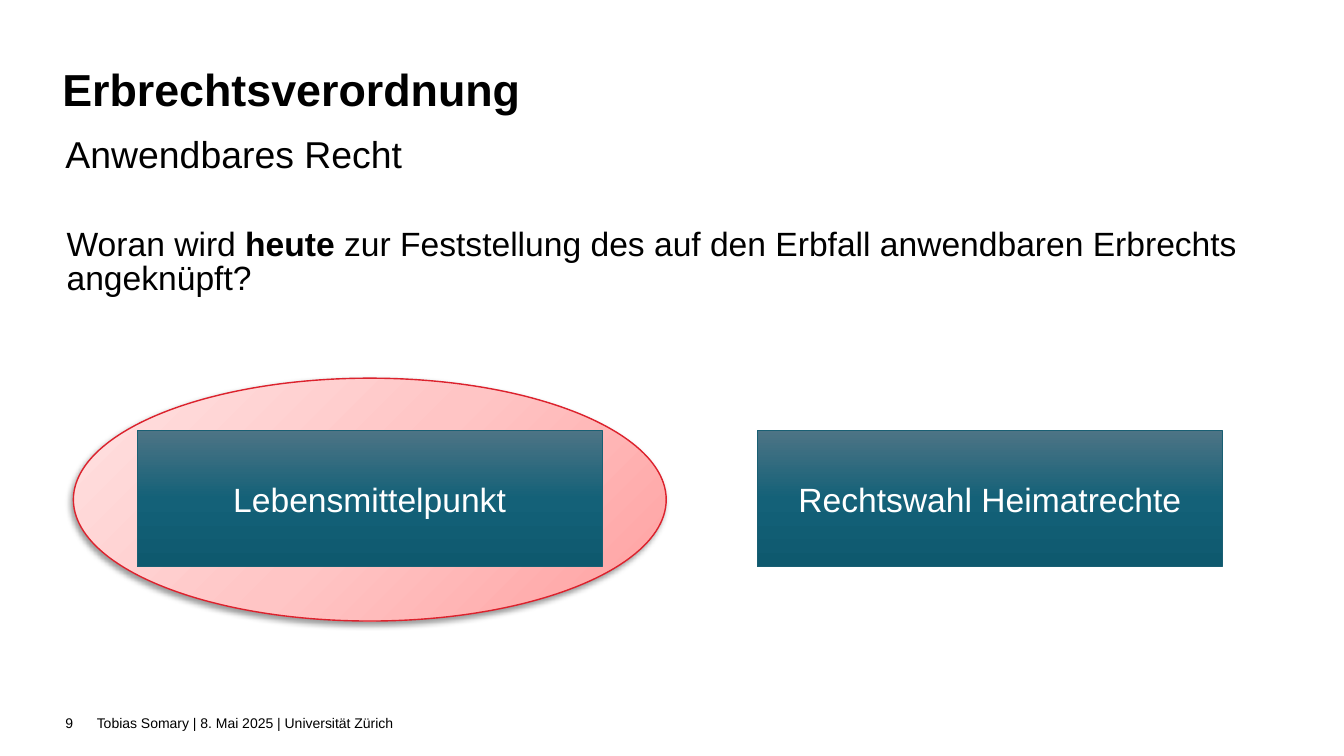
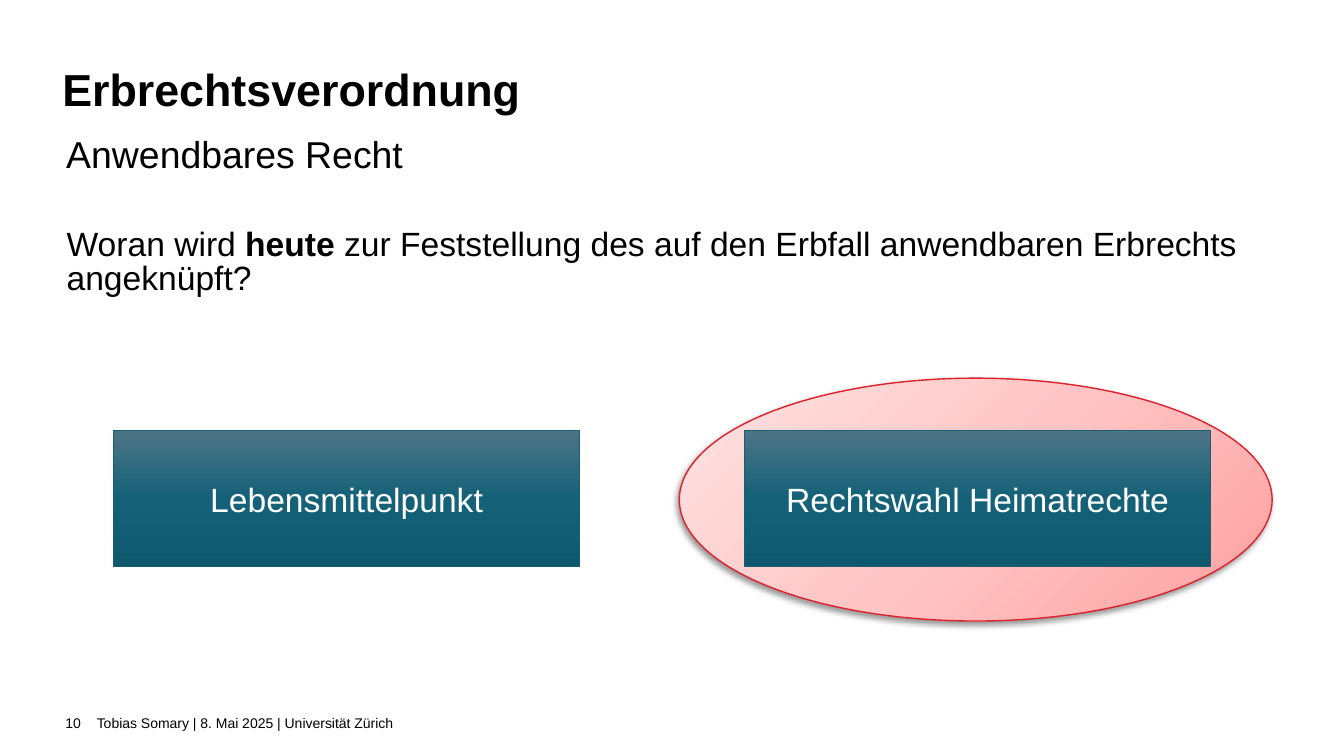
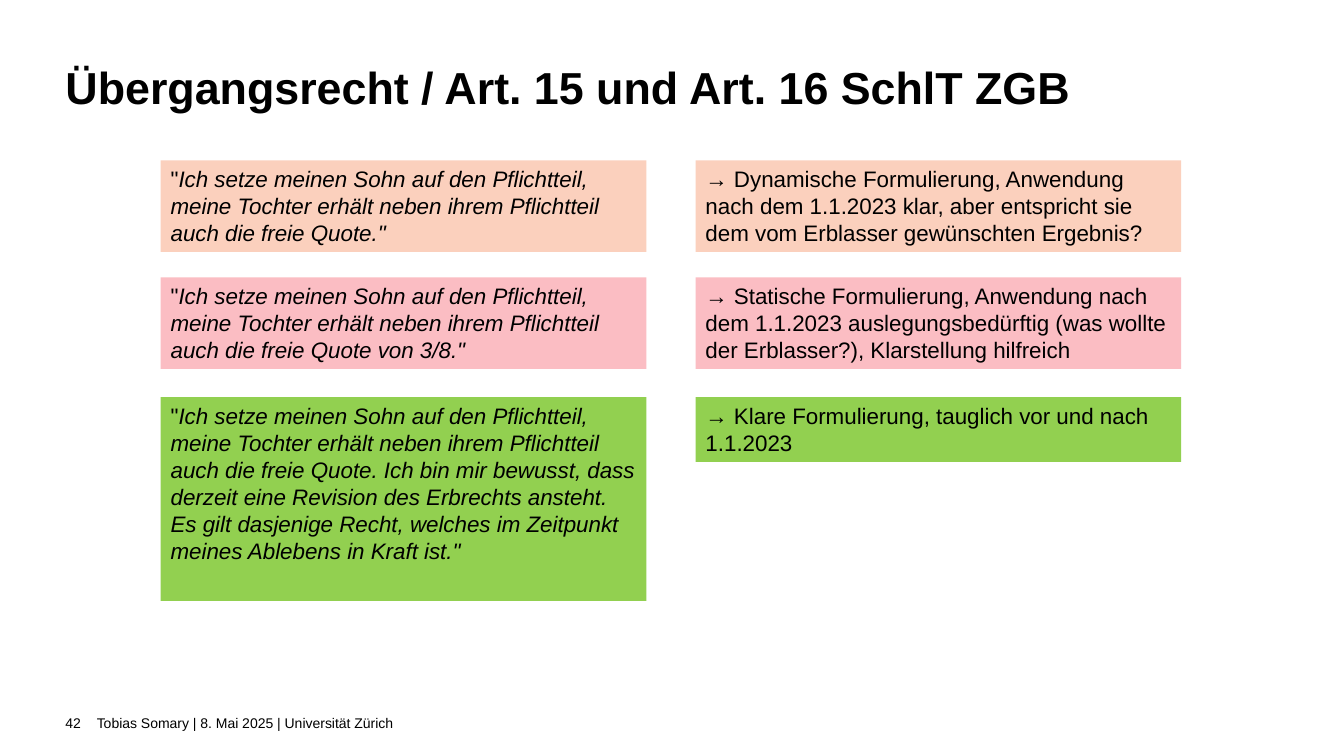
from dataclasses import dataclass

from lxml import etree
from pptx import Presentation
from pptx.dml.color import RGBColor
from pptx.enum.shapes import MSO_SHAPE
from pptx.enum.text import MSO_ANCHOR, PP_ALIGN
from pptx.oxml.ns import qn
from pptx.util import Cm, Pt

RECTANGLE, OVAL = MSO_SHAPE.RECTANGLE, MSO_SHAPE.FLOWCHART_CONNECTOR
TOP, MIDDLE, BOTTOM = MSO_ANCHOR.TOP, MSO_ANCHOR.MIDDLE, MSO_ANCHOR.BOTTOM
LEFT, CENTER = PP_ALIGN.LEFT, PP_ALIGN.CENTER


@dataclass(frozen=True)
class Theme:
    font: str = "Arial"
    # Colours
    ink: str = "000000"
    light: str = "FFFFFF"
    option_stops: tuple = ((0, "4D7485"), (50, "146178"), (100, "0E596E"))
    option_line: str = "195F73"
    marker_stops: tuple = ((0, "FFA0A0"), (50, "FFC5C5"), (100, "FFE3E3"))
    marker_line: str = "DC222D"
    peach: str = "FBD0BD"
    pink: str = "FBBDC3"
    green: str = "92D050"
    # Type sizes in points
    title: float = 32
    subtitle: float = 26.7
    body: float = 24
    clause: float = 16
    footer: float = 10
    # Horizontal and vertical insets in centimetres
    flush: tuple = (0, 0)
    padded: tuple = (0.33, 0.18)
    clause_inset: tuple = (0.25, 0.13)


class Deck:
    """Holds the style and the slide being filled; boxes are in centimetres."""

    def __init__(self, theme):
        self.theme = theme
        self.presentation = Presentation()
        self.presentation.slide_width = Cm(33.87)
        self.presentation.slide_height = Cm(19.05)
        self.slide = None

    # Slide and footer
    def new_slide(self, number):
        blank = self.presentation.slide_layouts[6]
        self.slide = self.presentation.slides.add_slide(blank)
        size = self.theme.footer
        self.text((1.65, 17.4, 0.79, 1.65), str(number), size, anchor=MIDDLE)
        self.text((2.44, 17.4, 11.94, 1.65),
                  "Tobias Somary | 8. Mai 2025 | Universität Zürich",
                  size, anchor=MIDDLE)

    # Text
    def fill_frame(self, frame, content, size, color=None, inset=None,
                   anchor=TOP, align=LEFT, bold=False):
        """Content is a string or a list of (text, bold, italic) runs."""
        side, edge = inset or self.theme.flush
        frame.word_wrap = True
        frame.vertical_anchor = anchor
        frame.margin_left = frame.margin_right = Cm(side)
        frame.margin_top = frame.margin_bottom = Cm(edge)
        paragraph = frame.paragraphs[0]
        paragraph.alignment = align
        pieces = [(content, bold, False)] if isinstance(content, str) else content
        for words, is_bold, is_italic in pieces:
            run = paragraph.add_run()
            run.text = words
            run.font.name = self.theme.font
            run.font.size = Pt(size)
            run.font.bold = is_bold
            run.font.italic = is_italic
            run.font.color.rgb = RGBColor.from_string(color or self.theme.ink)
        return paragraph

    def text(self, box, content, size, **style):
        frame = self.slide.shapes.add_textbox(*map(Cm, box)).text_frame
        return self.fill_frame(frame, content, size, **style)

    def title(self, box, words, **style):
        return self.text(box, words, self.theme.title, bold=True, **style)

    def subtitle(self, left, words):
        paragraph = self.text((left, 3.12, 20.52, 2.39), words,
                              self.theme.subtitle, inset=self.theme.padded)
        paragraph.space_before = Pt(8)

    def question(self, runs):
        paragraph = self.text((1.68, 5.79, 30.35, 3), runs, self.theme.body)
        paragraph.line_spacing = Pt(24)
        paragraph.space_before = Pt(10)

    # Shapes
    def shape(self, kind, box, line=None, width=1):
        shape = self.slide.shapes.add_shape(kind, *map(Cm, box))
        shape.shadow.inherit = False
        if line:
            shape.line.color.rgb = RGBColor.from_string(line)
            shape.line.width = Pt(width)
        else:
            shape.line.fill.background()
        return shape

    def gradient(self, shape, stops, angle):
        shape.fill.gradient()
        shape.fill.gradient_angle = 360 - angle
        stop_list = shape._element.spPr.find(qn("a:gradFill")).find(qn("a:gsLst"))
        for old_stop in list(stop_list):
            stop_list.remove(old_stop)
        for position, color in stops:
            stop = etree.SubElement(stop_list, qn("a:gs"), pos=str(position * 1000))
            etree.SubElement(stop, qn("a:srgbClr"), val=color)

    def marker(self, left):
        """Red oval with a soft shadow behind the chosen option."""
        oval = self.shape(OVAL, (left, 9.53, 14.94, 6.12), self.theme.marker_line)
        self.gradient(oval, self.theme.marker_stops, 225)
        effects = oval._element.spPr.find(qn("a:effectLst"))
        shadow = etree.SubElement(
            effects, qn("a:outerShdw"), blurRad=str(Pt(4)), dist=str(Pt(3)),
            dir=str(135 * 60000), algn="ctr", rotWithShape="0")
        color = etree.SubElement(shadow, qn("a:srgbClr"), val=self.theme.ink)
        etree.SubElement(color, qn("a:alpha"), val="40000")

    def option(self, left, words):
        block = self.shape(RECTANGLE, (left, 10.85, 11.73, 3.43),
                           self.theme.option_line, 0.5)
        self.gradient(block, self.theme.option_stops, 90)
        self.fill_frame(block.text_frame, words, self.theme.body, self.theme.light,
                        self.theme.padded, MIDDLE, CENTER)

    def clause(self, box, content, fill):
        block = self.shape(RECTANGLE, box)
        block.fill.solid()
        block.fill.fore_color.rgb = RGBColor.from_string(fill)
        self.fill_frame(block.text_frame, content, self.theme.clause,
                        inset=self.theme.clause_inset)


def connecting_factor_slide(deck, number, subtitle_left, marker_left, option_lefts):
    deck.new_slide(number)
    deck.title((1.24, 1.5, 32.28, 1.6), "Erbrechtsverordnung",
               anchor=BOTTOM, inset=deck.theme.padded)
    deck.subtitle(subtitle_left, "Anwendbares Recht")
    deck.question([
        ("Woran wird ", False, False),
        ("heute ", True, False),
        ("zur Feststellung des auf den Erbfall anwendbaren Erbrechts angeknüpft?",
         False, False),
    ])
    deck.marker(marker_left)
    for left, words in zip(option_lefts,
                           ("Lebensmittelpunkt", "Rechtswahl Heimatrechte")):
        deck.option(left, words)


def transitional_law_slide(deck):
    deck.new_slide(42)
    heading = deck.title((1.65, 1.65, 30.56, 2.49),
                         "Übergangsrecht / Art. 15 und Art. 16 SchlT ZGB")
    heading.line_spacing = 0.9

    # Each row: top, fill, height and ending of the will, height and text of the comment
    theme = deck.theme
    shared_wording = ("Ich setze meinen Sohn auf den Pflichtteil, meine Tochter "
                      "erhält neben ihrem Pflichtteil auch die freie Quote")
    rows = (
        (4.04, theme.peach, 2.31, '."', 2.31,
         "→ Dynamische Formulierung, Anwendung nach dem 1.1.2023 klar, aber "
         "entspricht sie dem vom Erblasser gewünschten Ergebnis?"),
        (6.99, theme.pink, 2.31, ' von 3/8."', 2.31,
         "→ Statische Formulierung, Anwendung nach dem 1.1.2023 "
         "auslegungsbedürftig (was wollte der Erblasser?), Klarstellung hilfreich"),
        (10.01, theme.green, 5.13,
         ". Ich bin mir bewusst, dass derzeit eine Revision des Erbrechts ansteht. "
         "Es gilt dasjenige Recht, welches im Zeitpunkt meines Ablebens in Kraft "
         'ist."', 1.63,
         "→ Klare Formulierung, tauglich vor und nach 1.1.2023"),
    )
    will_left, comment_left, width = 4.05, 17.53, 12.24
    for top, fill, will_height, ending, comment_height, comment in rows:
        will = [('"', False, False), (shared_wording + ending, False, True)]
        deck.clause((will_left, top, width, will_height), will, fill)
        deck.clause((comment_left, top, width, comment_height), comment, fill)


def main():
    deck = Deck(Theme())
    connecting_factor_slide(deck, 9, 1.32, 1.85, (3.45, 19.08))
    connecting_factor_slide(deck, 10, 1.34, 17.12, (2.87, 18.77))
    transitional_law_slide(deck)
    deck.presentation.save("out.pptx")


if __name__ == "__main__":
    main()
